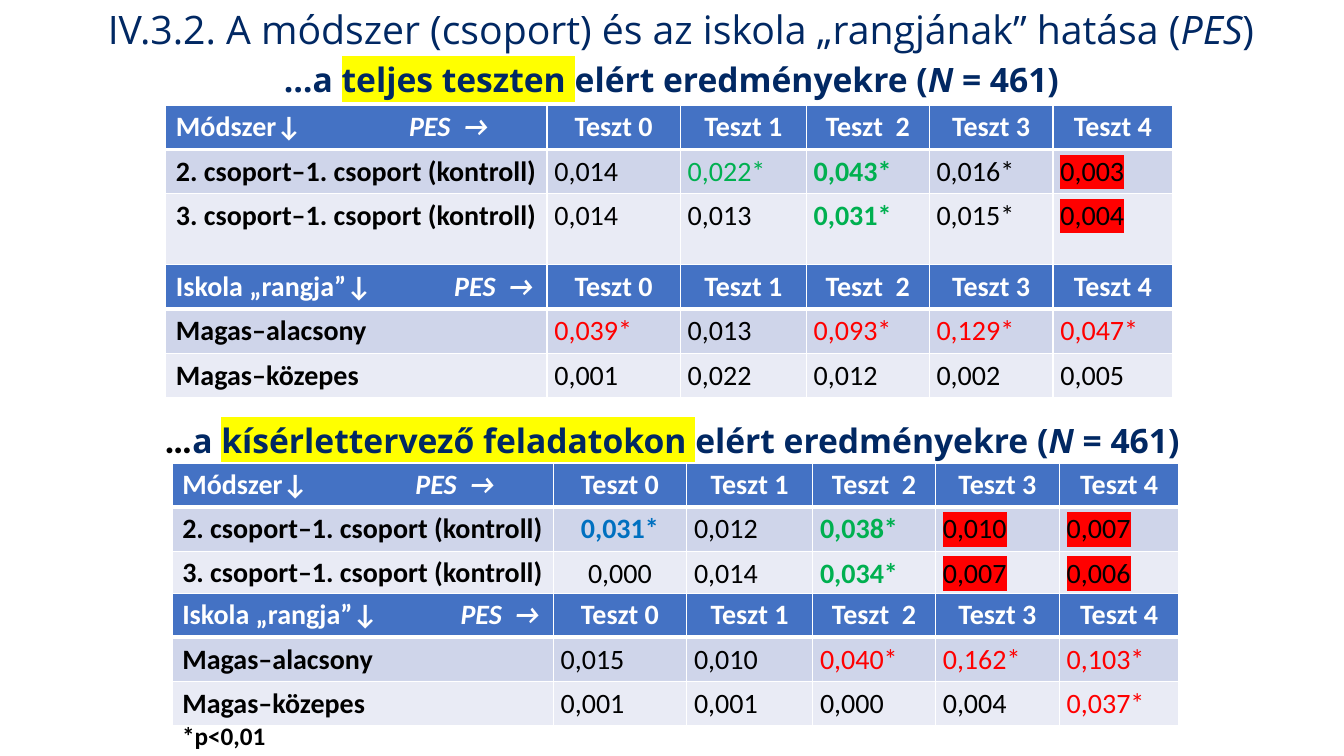
from dataclasses import dataclass

from lxml import etree
from pptx import Presentation
from pptx.dml.color import RGBColor
from pptx.enum.text import MSO_ANCHOR, MSO_AUTO_SIZE, PP_ALIGN
from pptx.oxml.ns import qn
from pptx.util import Emu, Pt

EMU_PER_PX = 9525
CENTER = PP_ALIGN.CENTER
MIDDLE, BOTTOM = MSO_ANCHOR.MIDDLE, MSO_ANCHOR.BOTTOM
NO_AUTOFIT = MSO_AUTO_SIZE.NONE
TITLE_ONLY_LAYOUT = 5


@dataclass(frozen=True)
class Theme:
    heading_font: str = "Open Sans"
    body_font: str = "Calibri"
    title_size: int = 28
    caption_size: int = 24
    table_size: int = 20
    note_size: int = 18
    navy: str = "012863"
    black: str = "000000"
    white: str = "FFFFFF"
    yellow: str = "FFFF00"
    red: str = "FF0000"
    green: str = "00B050"
    blue: str = "0070C0"
    header_fill: str = "4472C4"
    band_fills: tuple = ("CFD5EA", "E9EBF5")


THEME = Theme()

VALUE_STYLES = {
    "plain": {},
    "gain": {"color": THEME.green},
    "strong gain": {"color": THEME.green, "bold": True},
    "baseline": {"color": THEME.blue, "bold": True},
    "rank": {"color": THEME.red},
    "lost": {"highlight": THEME.red},
}

COLUMN_WIDTHS = (363, 127, 120, 117, 118, 114)
ROW_HEIGHT = 42
TEST_NAMES = ("Teszt 0", "Teszt 1", "Teszt  2", "Teszt 3", "Teszt 4")
METHOD_HEADER = ("Módszer↓", 222)
RANK_HEADER = ("Iskola „rangja”↓", 265)
GROUP_2 = "2. csoport–1. csoport (kontroll)"
GROUP_3 = "3. csoport–1. csoport (kontroll)"
HIGH_LOW = "Magas–alacsony"
HIGH_MIDDLE = "Magas–közepes"

FULL_TEST_METHOD = (
    (GROUP_2, "0,014", ("0,022*", "gain"), ("0,043*", "strong gain"), "0,016*", ("0,003", "lost")),
    (GROUP_3, "0,014", "0,013", ("0,031*", "strong gain"), "0,015*", ("0,004", "lost")),
)
FULL_TEST_RANK = (
    (HIGH_LOW, ("0,039*", "rank"), "0,013", ("0,093*", "rank"), ("0,129*", "rank"), ("0,047*", "rank")),
    (HIGH_MIDDLE, "0,001", "0,022", "0,012", "0,002", "0,005"),
)
DESIGN_TASK_METHOD = (
    (GROUP_2, ("0,031*", "baseline"), "0,012", ("0,038*", "strong gain"), ("0,010", "lost"), ("0,007", "lost")),
    (GROUP_3, "0,000", "0,014", ("0,034*", "strong gain"), ("0,007", "lost"), ("0,006", "lost")),
)
DESIGN_TASK_RANK = (
    (HIGH_LOW, "0,015", "0,010", ("0,040*", "rank"), ("0,162*", "rank"), ("0,103*", "rank")),
    (HIGH_MIDDLE, "0,001", "0,001", "0,000", "0,004", ("0,037*", "rank")),
)


def px(length):
    return Emu(length * EMU_PER_PX)


def add_run(paragraph, text, size, font=THEME.body_font, color=THEME.black,
            bold=False, italic=False, highlight=None):
    run = paragraph.add_run()
    run.text = text
    run.font.size = Pt(size)
    run.font.name = font
    run.font.bold = bold
    run.font.italic = italic
    run.font.color.rgb = RGBColor.from_string(color)
    if highlight:
        mark = etree.Element(qn("a:highlight"))
        etree.SubElement(mark, qn("a:srgbClr"), val=highlight)
        run.font.fill  # the fill element must precede the highlight
        run.font._element.find(qn("a:solidFill")).addnext(mark)


def add_title(slide, box):
    title = slide.shapes.title
    title.left, title.top, title.width, title.height = map(px, box)
    frame = title.text_frame
    frame.auto_size = NO_AUTOFIT
    frame.word_wrap = True
    frame.vertical_anchor = MIDDLE
    paragraph = frame.paragraphs[0]
    paragraph.alignment = CENTER
    paragraph.line_spacing = 0.9
    look = {"size": THEME.title_size, "font": THEME.heading_font, "color": THEME.navy}
    add_run(paragraph, "IV.3.2. A módszer (csoport) és az iskola „rangjának” hatása (", **look)
    add_run(paragraph, "PES", italic=True, **look)
    add_run(paragraph, ")", **look)


def add_text_box(slide, box, anchor):
    frame = slide.shapes.add_textbox(*map(px, box)).text_frame
    frame.word_wrap = True
    frame.vertical_anchor = anchor
    return frame


def add_caption(slide, box, topic, anchor=MIDDLE, bottom_inset=5, large_ellipsis=False):
    frame = add_text_box(slide, box, anchor)
    frame.margin_bottom = px(bottom_inset)
    paragraph = frame.paragraphs[0]
    paragraph.alignment = CENTER
    look = {"size": THEME.caption_size, "font": THEME.heading_font,
            "color": THEME.navy, "bold": True}
    if large_ellipsis:
        add_run(paragraph, "…", THEME.title_size, bold=True)
        add_run(paragraph, "a ", **look)
    else:
        add_run(paragraph, "…a ", **look)
    add_run(paragraph, topic, highlight=THEME.yellow, **look)
    add_run(paragraph, "elért eredményekre (", **look)
    add_run(paragraph, "N", italic=True, **look)
    add_run(paragraph, " = 461)", **look)


def format_cell(cell, fill, bottom_border=1):
    cell.fill.solid()
    cell.fill.fore_color.rgb = RGBColor.from_string(fill)
    properties = cell._tc.get_or_add_tcPr()
    borders = (("a:lnL", 1), ("a:lnR", 1), ("a:lnT", 1), ("a:lnB", bottom_border))
    for position, (tag, width) in enumerate(borders):
        line = etree.Element(qn(tag), w=str(Pt(width)))
        line_fill = etree.SubElement(line, qn("a:solidFill"))
        etree.SubElement(line_fill, qn("a:srgbClr"), val=THEME.white)
        properties.insert(position, line)


def fill_header(cells, header):
    label, effect_tab = header
    look = {"size": THEME.table_size, "color": THEME.white, "bold": True}
    for cell in cells:
        format_cell(cell, THEME.header_fill, bottom_border=3)
    paragraph = cells[0].text_frame.paragraphs[0]
    tabs = etree.SubElement(paragraph._p.get_or_add_pPr(), qn("a:tabLst"))
    etree.SubElement(tabs, qn("a:tab"), pos=str(px(effect_tab)), algn="l")
    add_run(paragraph, label + "\t", **look)
    add_run(paragraph, "PES  →", italic=True, **look)
    for cell, name in zip(cells[1:], TEST_NAMES):
        paragraph = cell.text_frame.paragraphs[0]
        paragraph.alignment = CENTER
        add_run(paragraph, name, **look)


def fill_value(cell, value, centered):
    text, style = (value, "plain") if isinstance(value, str) else value
    cell.margin_left = cell.margin_right = px(7)
    cell.margin_top = cell.margin_bottom = 0
    paragraph = cell.text_frame.paragraphs[0]
    paragraph.line_spacing = 1.15
    paragraph.space_after = Pt(10)
    if centered:
        paragraph.alignment = CENTER
    add_run(paragraph, text, THEME.table_size, **VALUE_STYLES[style])


def add_effect_table(slide, left, top, header, rows, last_height=ROW_HEIGHT, center_first=False):
    heights = [ROW_HEIGHT] * len(rows) + [last_height]
    table = slide.shapes.add_table(
        len(heights), len(COLUMN_WIDTHS), px(left), px(top),
        px(sum(COLUMN_WIDTHS)), px(sum(heights))).table
    for column, width in zip(table.columns, COLUMN_WIDTHS):
        column.width = px(width)
    for row, height in zip(table.rows, heights):
        row.height = px(height)
    header_row, *body_rows = (list(row.cells) for row in table.rows)
    fill_header(header_row, header)
    for cells, (label, *values), fill in zip(body_rows, rows, THEME.band_fills):
        for cell in cells:
            format_cell(cell, fill)
        add_run(cells[0].text_frame.paragraphs[0], label, THEME.table_size, bold=True)
        for index, (cell, value) in enumerate(zip(cells[1:], values)):
            fill_value(cell, value, center_first and index == 0)


def add_note(slide, box):
    frame = add_text_box(slide, box, BOTTOM)
    add_run(frame.paragraphs[0], "*p<0,01", THEME.note_size, bold=True)


def main():
    presentation = Presentation()
    presentation.slide_width, presentation.slide_height = px(1280), px(720)
    slide = presentation.slides.add_slide(presentation.slide_layouts[TITLE_ONLY_LAYOUT])
    add_title(slide, (30, 4, 1237, 53))
    add_effect_table(slide, 158, 100, METHOD_HEADER, FULL_TEST_METHOD, last_height=72)
    add_effect_table(slide, 158, 252, RANK_HEADER, FULL_TEST_RANK)
    add_caption(slide, (82, 330, 1116, 124), "kísérlettervező feladatokon ",
                BOTTOM, bottom_inset=15, large_ellipsis=True)
    add_effect_table(slide, 164, 441, METHOD_HEADER, DESIGN_TASK_METHOD, center_first=True)
    add_effect_table(slide, 164, 565, RANK_HEADER, DESIGN_TASK_RANK)
    add_note(slide, (164, 653, 957, 67))
    add_caption(slide, (194, 51, 891, 48), "teljes teszten ")
    presentation.save("out.pptx")


if __name__ == "__main__":
    main()
